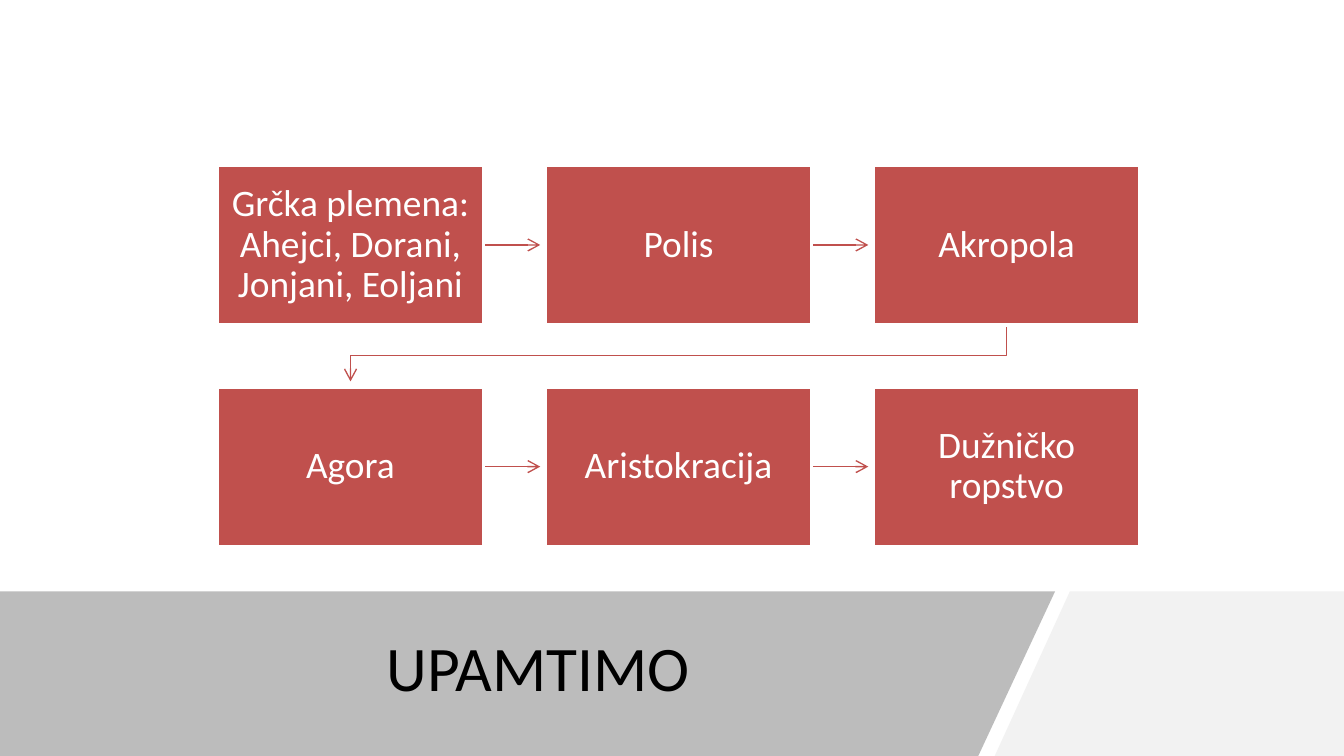
from lxml import etree
from pptx import Presentation
from pptx import util as u
from pptx.dml.color import RGBColor
from pptx.enum import shapes, text
from pptx.oxml.ns import qn

TITLE = "UPAMTIMO"
ROWS = [
    ["Grčka plemena: Ahejci, Dorani, Jonjani, Eoljani", "Polis", "Akropola"],
    ["Agora", "Aristokracija", "Dužničko ropstvo"],
]
BANDS = [
    ([(0, 11.18), (19.94, 11.18), (18.49, 14.29), (0, 14.29)], "595959", 40),
    ([(20.22, 11.18), (25.4, 11.18), (25.4, 14.29), (18.8, 14.29)], "F2F2F2", 100),
]
RED, WHITE, BLACK = "C0504D", "FFFFFF", "000000"
LEFT, TOP = 4.11, 3.12
BOX_WIDTH, BOX_HEIGHT = 5.03, 3.02
STEP_X, STEP_Y = 6.2, 4.19
ARROW_LENGTH = 1.07


def paint(color_format, color):
    color_format.rgb = RGBColor.from_string(color)


def fill(shape, color):
    shape.fill.solid()
    paint(shape.fill.fore_color, color)


def write(shape, content, size, color):
    frame = shape.text_frame
    frame.word_wrap = True
    frame.auto_size = text.MSO_AUTO_SIZE.NONE
    frame.vertical_anchor = text.MSO_ANCHOR.MIDDLE
    frame.text = content
    paragraph = frame.paragraphs[0]
    paragraph.alignment = text.PP_ALIGN.CENTER
    paragraph.line_spacing = 0.9
    paragraph.font.name = "Calibri"
    paragraph.font.size = u.Pt(size)
    paint(paragraph.font.color, color)


def send_to_back(shape):
    slide.shapes._spTree.insert(2, shape._element)


def add_outline(points, close):
    points = [(u.Cm(x), u.Cm(y)) for x, y in points]
    builder = slide.shapes.build_freeform(*points[0])
    builder.add_line_segments(points[1:], close=close)
    shape = builder.convert_to_shape()
    shape.shadow.inherit = False
    return shape


def add_band(points, color, opacity):
    band = add_outline(points, True)
    fill(band, color)
    band.line.fill.background()
    if opacity < 100:
        color_element = band._element.spPr.find(qn("a:solidFill"))[0]
        etree.SubElement(color_element, qn("a:alpha"), val=str(opacity * 1000))
    send_to_back(band)


def add_box(label, row, column):
    box = slide.shapes.add_shape(
        shapes.MSO_SHAPE.RECTANGLE,
        u.Cm(LEFT + column * STEP_X), u.Cm(TOP + row * STEP_Y),
        u.Cm(BOX_WIDTH), u.Cm(BOX_HEIGHT))
    box.shadow.inherit = False
    fill(box, RED)
    paint(box.line.color, WHITE)
    box.line.width = u.Pt(2)
    write(box, label, 20, WHITE)
    frame = box.text_frame
    frame.margin_left = frame.margin_right = u.Cm(0.25)
    frame.margin_top = frame.margin_bottom = u.Cm(0.25)
    return box


def style_arrow(arrow):
    paint(arrow.line.color, RED)
    arrow.line.width = u.Pt(0.75)
    etree.SubElement(arrow.line._get_or_add_ln(), qn("a:tailEnd"), type="arrow")
    send_to_back(arrow)


def add_arrow(box):
    start = box.left + box.width
    middle = box.top + box.height // 2
    arrow = slide.shapes.add_connector(
        shapes.MSO_CONNECTOR.STRAIGHT, start, middle, start + u.Cm(ARROW_LENGTH), middle)
    arrow.begin_connect(box, 3)
    etree.SubElement(arrow._element.spPr, qn("a:effectLst"))
    style_arrow(arrow)


def add_return_arrow():
    first_x = LEFT + BOX_WIDTH / 2
    last_x = first_x + 2 * STEP_X
    bottom = TOP + BOX_HEIGHT
    turn = bottom + (STEP_Y - BOX_HEIGHT) / 2
    arrow = add_outline(
        [(last_x, bottom), (last_x, turn), (first_x, turn), (first_x, bottom + ARROW_LENGTH)],
        False)
    arrow.fill.background()
    style_arrow(arrow)


presentation = Presentation()
presentation.slide_width, presentation.slide_height = u.Cm(25.4), u.Cm(14.29)
slide = presentation.slides.add_slide(presentation.slide_layouts[5])

title = slide.shapes.title
title.left, title.top = u.Cm(1.75), u.Cm(11.53)
title.width, title.height = u.Cm(16.84), u.Cm(2.29)
write(title, TITLE, 34, BLACK)

for row, labels in enumerate(ROWS):
    boxes = [add_box(label, row, column) for column, label in enumerate(labels)]
    for box in boxes[:-1]:
        add_arrow(box)
add_return_arrow()

for band in BANDS:
    add_band(*band)

presentation.save("out.pptx")
